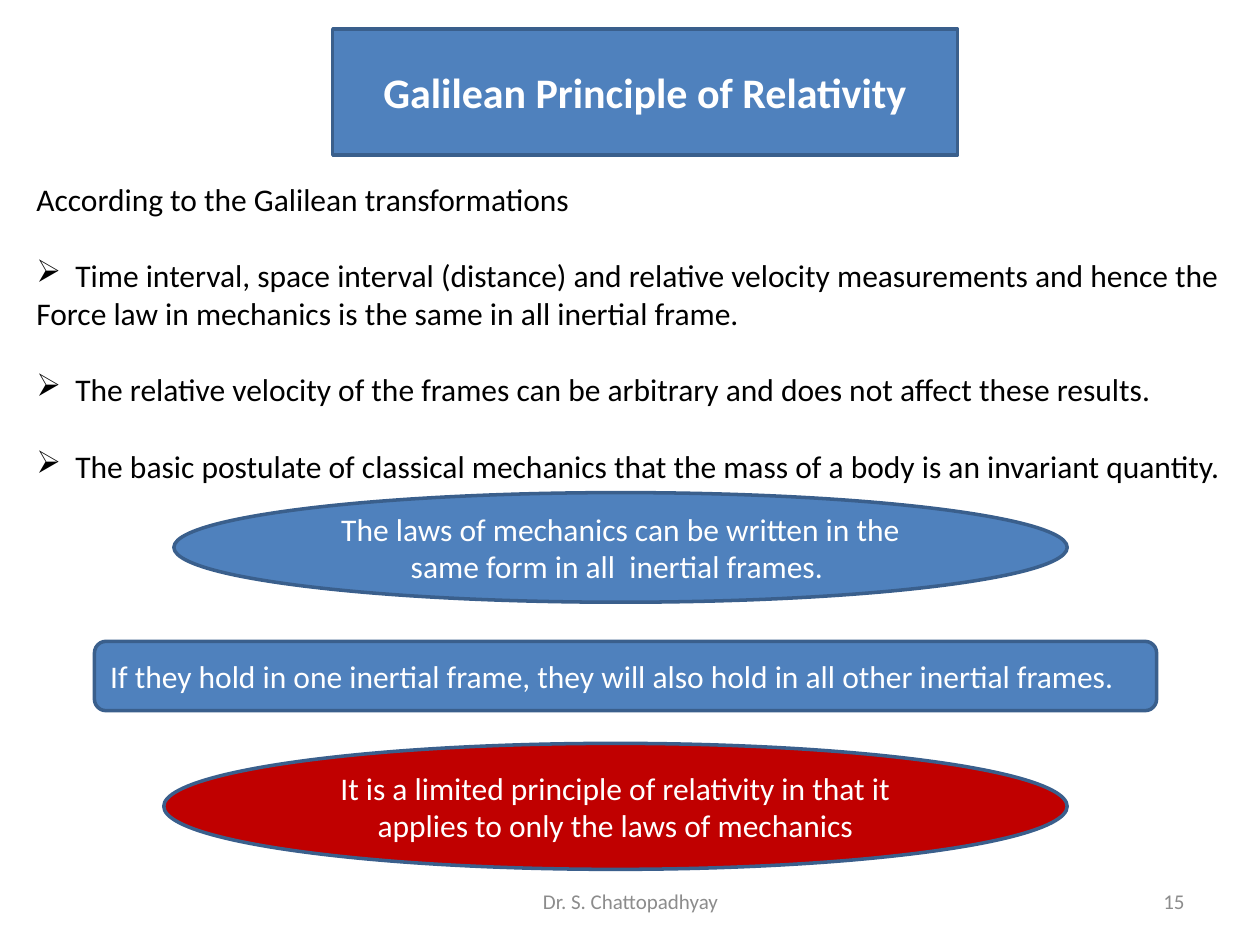
"""Build a slide on the Galilean principle of relativity."""
import pptx
import pptx.util
import pptx.dml.color
import pptx.enum.shapes
import pptx.enum.text
import pptx.oxml
import pptx.oxml.ns
from lxml import etree

Inches, Pt = pptx.util.Inches, pptx.util.Pt
KIND = pptx.enum.shapes.MSO_SHAPE
ALIGN = pptx.enum.text.PP_ALIGN
ANCHOR = pptx.enum.text.MSO_ANCHOR
BLUE, EDGE, RED, GREY = "4F81BD", "3A5F8C", "C00000", "8C8C8C"
GAP = 22

TITLE = ("Galilean Principle of Relativity", (2.64, 0.23, 4.96, 1))
BODY_BOX = (0.19, 1.38, 9.77, 2.52)
BODY = [
    ("According to the Galilean transformations", False, 0),
    ("Time interval, space interval (distance) and relative velocity measurements and hence the", True, GAP),
    ("Force law in mechanics is the same in all inertial frame.", False, 0),
    ("The relative velocity of the frames can be arbitrary and does not affect these results.", True, GAP),
    ("The basic postulate of classical mechanics that the mass of a body is an invariant quantity.", True, GAP),
]
CLAIMS = [
    (KIND.OVAL, (1.38, 3.91, 7.09, 0.87), BLUE, ALIGN.CENTER,
     "The laws of mechanics can be written in the same form in all  inertial frames. "),
    (KIND.ROUNDED_RECTANGLE, (0.75, 5.09, 8.43, 0.55), BLUE, ALIGN.LEFT,
     "If they hold in one inertial frame, they will also hold in all other inertial frames."),
    (KIND.OVAL, (1.3, 5.9, 7.17, 1), RED, ALIGN.CENTER,
     "It is a limited principle of relativity in that it applies to only the laws of mechanics"),
]
FOOTER = [
    ("Dr. S. Chattopadhyay", (3.42, 6.95, 3.17, 0.4), ALIGN.CENTER),
    ("15", (7.17, 6.95, 2.33, 0.4), ALIGN.RIGHT),
]


def paint(part, color):
    part.rgb = pptx.dml.color.RGBColor.from_string(color)


def write(frame, lines, size=18, color="FFFFFF", bold=False, align=ALIGN.LEFT,
          anchor=ANCHOR.MIDDLE, wrap=True):
    frame.word_wrap = wrap
    frame.auto_size = pptx.enum.text.MSO_AUTO_SIZE.NONE
    frame.vertical_anchor = anchor
    for i, (text, mark, gap) in enumerate(lines):
        para = frame.paragraphs[0] if i == 0 else frame.add_paragraph()
        para.alignment = align
        para.space_before = Pt(gap)
        run = para.add_run()
        run.text = text
        run.font.name, run.font.size, run.font.bold = "Calibri", Pt(size), bold
        paint(run.font.color, color)
        if mark:
            props = para._p.get_or_add_pPr()
            props.set("marL", str(Inches(0.31)))
            props.set("indent", str(-Inches(0.31)))
            etree.SubElement(props, pptx.oxml.ns.qn("a:buChar"), char="➢")


def dress(shape, fill):
    shape.fill.solid()
    paint(shape.fill.fore_color, fill)
    paint(shape.line.color, EDGE)
    shape.line.width = Pt(2)


def place(box):
    return [Inches(n) for n in box]


def main():
    deck = pptx.Presentation()
    deck.slide_width, deck.slide_height = Inches(10), Inches(7.5)
    slide = deck.slides.add_slide(deck.slide_layouts[5])

    text, box = TITLE
    title = slide.shapes.title
    title.left, title.top, title.width, title.height = place(box)
    round_geom = pptx.oxml.parse_xml(
        f'<a:prstGeom {pptx.oxml.ns.nsdecls("a")} prst="roundRect"><a:avLst/></a:prstGeom>')
    title._element.spPr.append(round_geom)
    dress(title, BLUE)
    write(title.text_frame, [(text, False, 0)], size=24, bold=True, align=ALIGN.CENTER)

    body = slide.shapes.add_textbox(*place(BODY_BOX))
    write(body.text_frame, BODY, color="000000", anchor=ANCHOR.TOP, wrap=False)

    for kind, box, fill, align, text in CLAIMS:
        shape = slide.shapes.add_shape(kind, *place(box))
        shape.shadow.inherit = False
        dress(shape, fill)
        write(shape.text_frame, [(text, False, 0)], align=align)

    for text, box, align in FOOTER:
        note = slide.shapes.add_textbox(*place(box))
        write(note.text_frame, [(text, False, 0)], size=12, color=GREY, align=align)

    deck.save("out.pptx")


if __name__ == "__main__":
    main()
